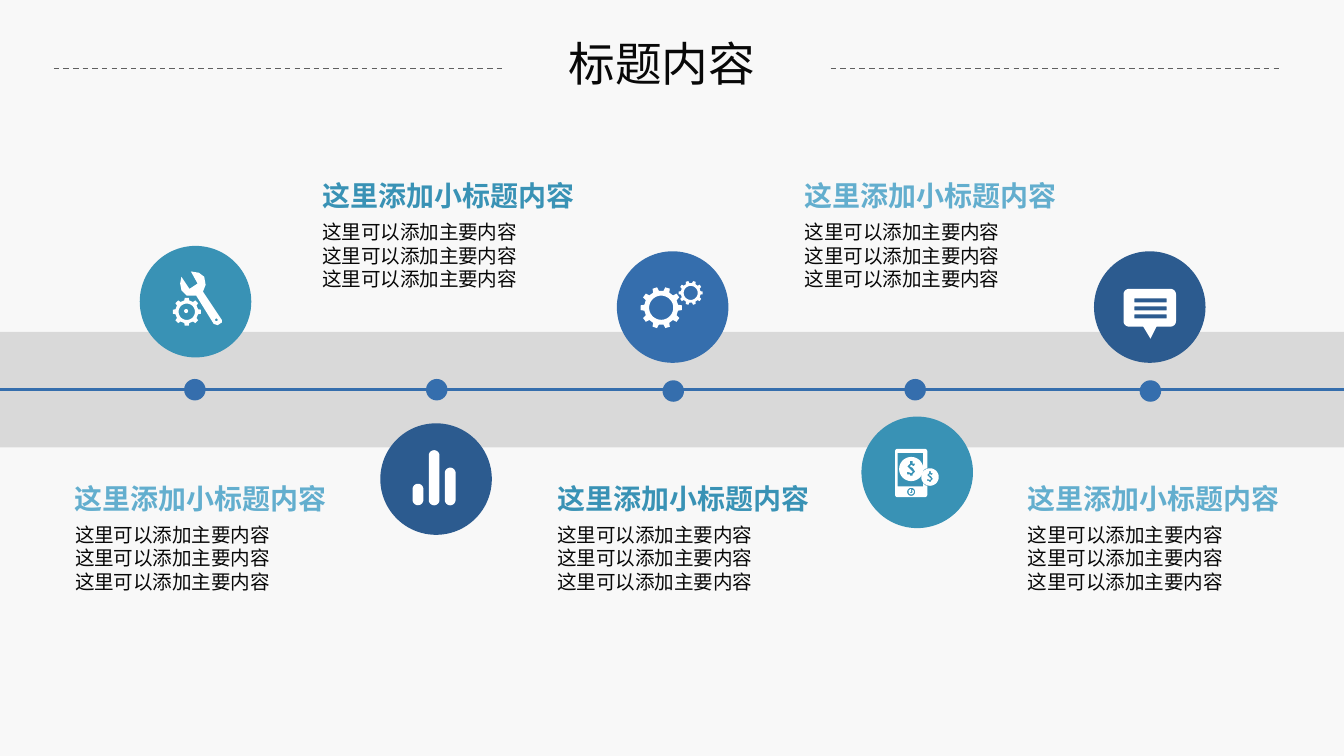
import math
import lxml.etree
import pptx
import pptx.dml.color
import pptx.enum.dml
import pptx.enum.shapes
import pptx.enum.text
import pptx.oxml.ns
import pptx.util

Inches = pptx.util.Inches
SHAPES = pptx.enum.shapes.MSO_SHAPE
ALIGN = pptx.enum.text.PP_ALIGN
FONT = "Noto Sans CJK SC"
INK, BLUE, NAVY, TEAL, SKY, WHITE = "080808", "356EAD", "2C5B8F", "3992B5", "63AECE", "FFFFFF"

TITLE = "标题内容"
HEADING = "这里添加小标题内容"
BODY = ["这里可以添加主要内容"] * 3
STEPS = [
    {"dot": (1.37, 2.82), "circle": (1.04, 1.83), "fill": TEAL, "text": (0.46, 3.53), "heading": SKY},
    {"dot": (3.17, 2.82), "circle": (2.83, 3.15), "fill": NAVY, "text": (2.3, 1.28), "heading": TEAL},
    {"dot": (4.93, 2.83), "circle": (4.59, 1.87), "fill": BLUE, "text": (4.05, 3.53), "heading": TEAL},
    {"dot": (6.73, 2.82), "circle": (6.41, 3.1), "fill": TEAL, "text": (5.89, 1.28), "heading": SKY},
    {"dot": (8.48, 2.83), "circle": (8.14, 1.87), "fill": NAVY, "text": (7.55, 3.53), "heading": SKY},
]
GEARS = [(4.92, 2.29, 0.155, 10), (5.14, 2.18, 0.09, 10), (1.39, 2.32, 0.105, 8)]
BARS = [(3.07, 3.6), (3.19, 3.35), (3.31, 3.48)]
BAR_BOTTOM = 3.76
COINS = [(6.78, 3.49, 0.09), (6.92, 3.55, 0.065)]
DOLLAR = [(1, 4), (1, 5), (-1, 5), (-1, 4), (-3, 4), (-3, 2), (0, 3), (1, 2), (0, 1), (-3, -2),
          (-1, -4), (-1, -6), (1, -6), (1, -4), (3, -4), (2, -2), (0, -3), (-1, -2), (1, -1), (3, 2)]
WRENCH = [(1.65, 2.38), (1.51, 2.17), (1.53, 2.12), (1.52, 2.06), (1.48, 2.03), (1.42, 2.02),
          (1.47, 2.11), (1.41, 2.15), (1.35, 2.06), (1.34, 2.11), (1.35, 2.16), (1.39, 2.2),
          (1.46, 2.2), (1.59, 2.41), (1.62, 2.42), (1.65, 2.4)]

presentation = pptx.Presentation()
presentation.slide_width, presentation.slide_height = Inches(10), Inches(10 * 9 / 16)
slide = presentation.slides.add_slide(presentation.slide_layouts[5])


def color(value):
    return pptx.dml.color.RGBColor.from_string(value)


def paint(shape, fill):
    shape.shadow.inherit = False
    shape.fill.solid()
    shape.fill.fore_color.rgb = color(fill)
    shape.line.fill.background()


def add_preset(kind, left, top, width, height, fill):
    shape = slide.shapes.add_shape(kind, *map(Inches, (left, top, width, height)))
    paint(shape, fill)


def add_outline(*contours):
    scaled = [[(Inches(x), Inches(y)) for x, y in contour] for contour in contours]
    builder = slide.shapes.build_freeform(*scaled[0][0])
    builder.add_line_segments(scaled[0][1:], close=True)
    for contour in scaled[1:]:
        builder.move_to(*contour[0])
        builder.add_line_segments(contour[1:], close=True)
    paint(builder.convert_to_shape(), WHITE)


def add_line(left, right, y, line_color, width, dash=None):
    line = slide.shapes.add_connector(
        pptx.enum.shapes.MSO_CONNECTOR.STRAIGHT, *map(Inches, (left, y, right, y)))
    line.line.color.rgb = color(line_color)
    line.line.width = pptx.util.Pt(width)
    line.line.dash_style = dash
    lxml.etree.SubElement(line._element.spPr, pptx.oxml.ns.qn("a:effectLst"))


def write(shape, lines, size, font_color, bold=False, align=ALIGN.LEFT):
    frame = shape.text_frame
    frame.text = "\n".join(lines)
    frame_format = {
        "word_wrap": True, "auto_size": pptx.enum.text.MSO_AUTO_SIZE.NONE,
        "vertical_anchor": pptx.enum.text.MSO_ANCHOR.TOP,
        "margin_left": Inches(0.1), "margin_right": Inches(0.1),
        "margin_top": Inches(0.05), "margin_bottom": Inches(0.05),
    }
    for name, value in frame_format.items():
        setattr(frame, name, value)
    for paragraph in frame.paragraphs:
        paragraph.alignment = align
        run = paragraph.runs[0]
        for name, value in {"size": pptx.util.Pt(size), "name": FONT, "bold": bold}.items():
            setattr(run.font, name, value)
        run.font.color.rgb = color(font_color)
        east_asian = lxml.etree.SubElement(run._r.get_or_add_rPr(), pptx.oxml.ns.qn("a:ea"))
        east_asian.set("typeface", FONT)


def polar(x, y, radius, degrees):
    angle = math.radians(degrees)
    return x + radius * math.cos(angle), y + radius * math.sin(angle)


def arc(x, y, radius, start=0, end=360, steps=36):
    return [polar(x, y, radius, start + (end - start) * i / steps) for i in range(steps + 1)]


def rectangle(left, top, width, height):
    return [(left, top), (left + width, top), (left + width, top + height), (left, top + height)]


def rounded(left, top, width, height, radius):
    corners = rectangle(left + radius, top + radius, width - 2 * radius, height - 2 * radius)
    return [point for i, (x, y) in enumerate(corners)
            for point in arc(x, y, radius, 180 + 90 * i, 270 + 90 * i, 8)]


def gear(x, y, radius, teeth):
    step = 360 / teeth
    profile = [(-0.28, 0.82), (-0.18, 1), (0.18, 1), (0.28, 0.82)]
    return [polar(x, y, radius * reach, step * (tooth + turn))
            for tooth in range(teeth) for turn, reach in profile]


slide.background.fill.solid()
slide.background.fill.fore_color.rgb = color("F8F8F8")
title = slide.shapes.title
title_box = {"left": 4.06, "top": 0.21, "width": 1.73, "height": 0.52}
for name, value in title_box.items():
    setattr(title, name, Inches(value))
write(title, [TITLE], 25, INK, align=ALIGN.CENTER)
for left in (0.4, 6.18):
    add_line(left, left + 3.34, 0.51, "5F5F5F", 0.75, pptx.enum.dml.MSO_LINE.DASH)

add_preset(SHAPES.RECTANGLE, 0, 2.47, 10, 0.86, "D9D9D9")
add_line(0, 10, 2.9, BLUE, 1.5)
for step in STEPS:
    add_preset(SHAPES.OVAL, *step["dot"], 0.16, 0.16, BLUE)
    add_preset(SHAPES.OVAL, *step["circle"], 0.83, 0.83, step["fill"])
    left, top = step["text"]
    body = slide.shapes.add_textbox(*map(Inches, (left, top + 0.31, 2.01, 0.63)))
    write(body, BODY, 10.5, INK)
    heading = slide.shapes.add_textbox(*map(Inches, (left, top, 2.13, 0.35)))
    write(heading, [HEADING], 15, step["heading"], bold=True)

for x, y, radius, teeth in GEARS:
    add_outline(gear(x, y, radius, teeth), arc(x, y, radius * 0.58))
add_preset(SHAPES.OVAL, 1.37, 2.3, 0.03, 0.03, WHITE)
add_outline(WRENCH, arc(1.61, 2.38, 0.01))

for left, top in BARS:
    add_outline(rounded(left, top, 0.08, BAR_BOTTOM - top, 0.04))

add_outline([(8.5, 2.42), (8.61, 2.42), (8.56, 2.52)])
add_outline(rounded(8.36, 2.15, 0.39, 0.28, 0.04),
            *[rectangle(8.44, 2.22 + 0.06 * i, 0.24, 0.03) for i in range(3)])

add_outline(rounded(6.66, 3.34, 0.24, 0.36, 0.02),
            rectangle(6.68, 3.37, 0.19, 0.25), arc(6.78, 3.66, 0.03))
add_outline(arc(6.78, 3.66, 0.02, -50, 230) + arc(6.78, 3.66, 0.01, 230, -50))
add_preset(SHAPES.RECTANGLE, 6.77, 3.64, 0.01, 0.02, WHITE)
add_preset(SHAPES.OVAL, 6.85, 3.48, 0.14, 0.14, TEAL)
for x, y, radius in COINS:
    unit = radius / 9
    add_outline(arc(x, y, radius), [(x + dx * unit, y + dy * unit) for dx, dy in DOLLAR])

presentation.save("out.pptx")
